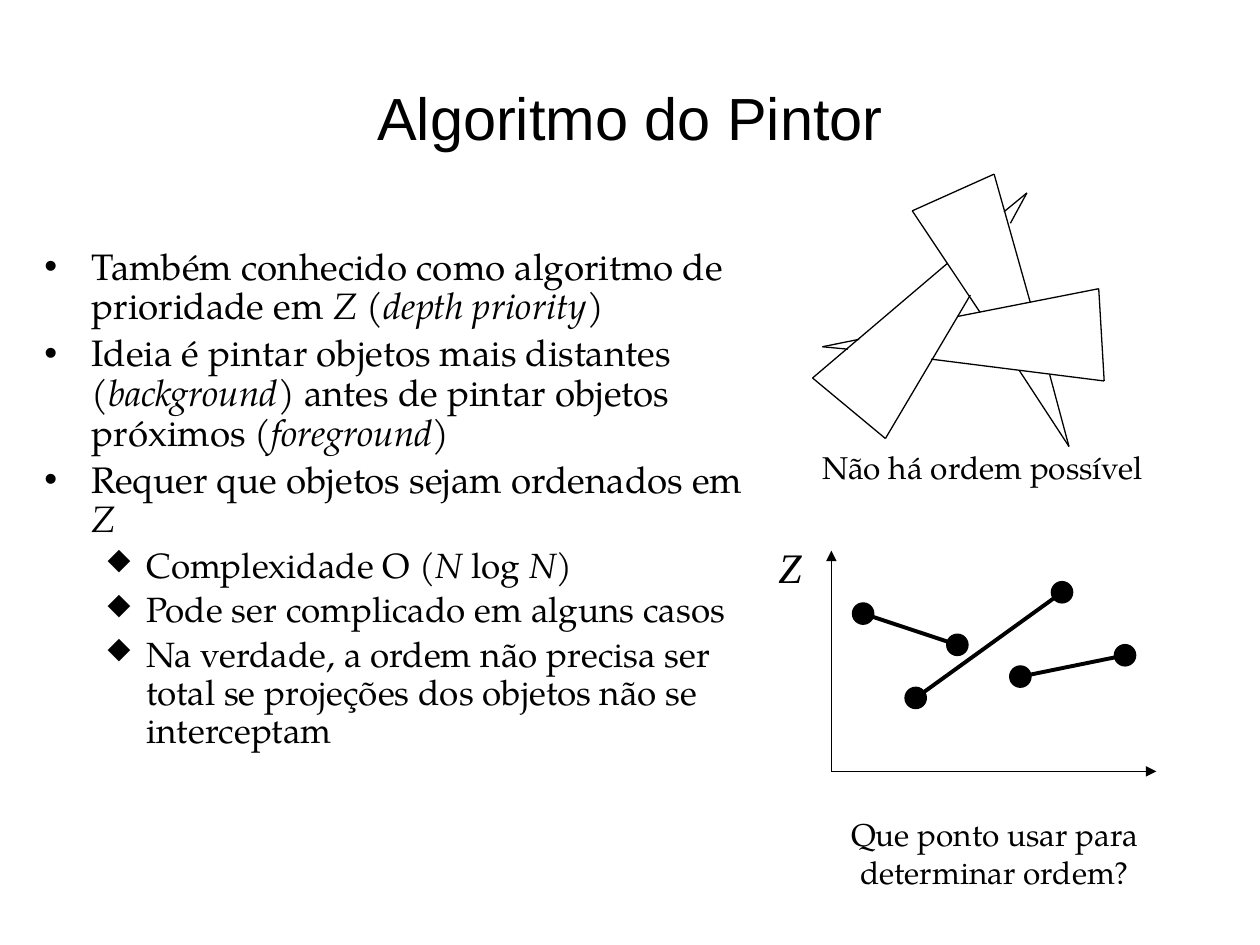
from dataclasses import dataclass
from itertools import pairwise
from lxml.etree import SubElement
from pptx import Presentation
from pptx.dml.color import RGBColor
from pptx.enum.shapes import MSO_CONNECTOR, MSO_SHAPE
from pptx.enum.text import MSO_ANCHOR, MSO_AUTO_SIZE, PP_ALIGN
from pptx.oxml.ns import qn
from pptx.util import Cm, Pt


@dataclass(frozen=True)
class Theme:
    """Colours, fonts, type sizes and line widths."""
    ink: RGBColor = RGBColor(0, 0, 0)
    head: str = "Arial"
    text: str = "TeX Gyre Pagella"
    axis: str = "Times New Roman"
    title: float = 34
    list: float = 21
    sub: float = 20
    note: float = 18
    mark: float = 24
    thin: float = 0.75
    bold: float = 2.25


THEME = Theme()
ITEMS = [
    (0, "Também conhecido como algoritmo de prioridade em *Z* (*depth priority*)"),
    (0, "Ideia é pintar objetos mais distantes (*background*) antes de pintar "
        "objetos próximos (*foreground*)"),
    (0, "Requer que objetos sejam ordenados em *Z*"),
    (1, "Complexidade O (*N* log *N*)"),
    (1, "Pode ser complicado em alguns casos"),
    (1, "Na verdade, a ordem não precisa ser total se projeções dos objetos "
        "não se interceptam"),
]
LEVELS = [
    dict(size=THEME.list, left=0.95, hang=0.95, mark="•", font=THEME.head),
    dict(size=THEME.sub, left=2.06, hang=0.79, mark="⬥", font=THEME.text),
]
PATHS = [
    [(2.72, 1.8), (0, 4.11), (1.47, 5.33), (3.18, 2.44)],
    [(3.38, 2.79), (2.01, 0.74), (3.66, 0), (4.39, 2.59)],
    [(2.92, 2.87), (5.77, 2.31), (5.88, 4.17), (2.39, 3.73)],
    [(0.94, 3.33), (0.2, 3.48), (0.71, 3.53)],
    [(3.86, 0.76), (4.32, 0.38), (3.99, 0.99)],
    [(4.17, 3.96), (5.17, 5.49), (4.78, 4.04)],
]
SPANS = [
    [(0.64, 1.27), (2.54, 1.9)],
    [(1.7, 2.97), (4.65, 0.84)],
    [(3.81, 2.54), (5.92, 2.11)],
]


def apply(item, form):
    """Set each attribute named in the form."""
    for name, value in form.items():
        setattr(item, name, value)


def place(shape, box):
    """Move a shape to a box given in centimetres."""
    apply(shape, dict(zip(("left", "top", "width", "height"), map(Cm, box))))


def write(para, text, font, size):
    """Add runs, with italics between asterisks."""
    for rank, part in enumerate(text.split("*")):
        if part:
            run = para.add_run()
            run.text = part
            apply(run.font, dict(name=font, size=Pt(size), italic=rank % 2 == 1))
            run.font.color.rgb = THEME.ink


def draw_title(slide, box, text):
    """Fill the title placeholder."""
    shape = slide.shapes.title
    place(shape, box)
    apply(shape.text_frame, dict(vertical_anchor=MSO_ANCHOR.MIDDLE,
                                 auto_size=MSO_AUTO_SIZE.NONE))
    para = shape.text_frame.paragraphs[0]
    para.alignment = PP_ALIGN.CENTER
    write(para, text, THEME.head, THEME.title)


def draw_list(slide, box, items):
    """Fill the body placeholder with a bulleted list."""
    shape = slide.placeholders[1]
    place(shape, box)
    frame = shape.text_frame
    frame.auto_size = MSO_AUTO_SIZE.NONE
    for rank, (level, text) in enumerate(items):
        para = frame.add_paragraph() if rank else frame.paragraphs[0]
        form = LEVELS[level]
        apply(para, dict(level=level, line_spacing=0.9,
                         space_before=Pt(form["size"] * 0.2)))
        write(para, text, THEME.text, form["size"])
        props = para._p.get_or_add_pPr()
        props.set("marL", str(Cm(form["left"])))
        props.set("indent", str(-Cm(form["hang"])))
        SubElement(props, qn("a:buFont")).set("typeface", form["font"])
        SubElement(props, qn("a:buChar")).set("char", form["mark"])


def draw_note(slide, box, lines, font, size, align=PP_ALIGN.CENTER):
    """Add a text box with one paragraph per line."""
    frame = slide.shapes.add_textbox(*map(Cm, box)).text_frame
    frame.word_wrap = False
    for rank, text in enumerate(lines):
        para = frame.add_paragraph() if rank else frame.paragraphs[0]
        para.alignment = align
        write(para, text, font, size)


def draw_line(slide, box, start, end, width, arrow=False):
    """Join two points measured from the corner of the box."""
    ends = [Cm(base + step) for point in (start, end)
            for base, step in zip(box, point)]
    line = slide.shapes.add_connector(MSO_CONNECTOR.STRAIGHT, *ends)
    line.line.width = Pt(width)
    line.line.color.rgb = THEME.ink
    if arrow:
        SubElement(line.line._get_or_add_ln(), qn("a:tailEnd")).set("type", "triangle")
    SubElement(line._element.spPr, qn("a:effectLst"))


def draw_dot(slide, box, point, size=0.43):
    """Centre a filled dot on a point of the box."""
    left, top = (base + step - size / 2 for base, step in zip(box, point))
    dot = slide.shapes.add_shape(MSO_SHAPE.OVAL, *map(Cm, (left, top, size, size)))
    dot.shadow.inherit = False
    dot.fill.solid()
    dot.fill.fore_color.rgb = dot.line.color.rgb = THEME.ink
    dot.line.width = Pt(THEME.thin)


def draw_cycle(slide, box):
    """Draw the overlapping outlines and their caption."""
    for trail in PATHS:
        for start, end in pairwise(trail):
            draw_line(slide, box, start, end, THEME.thin)
    left, top, wide, high = box
    draw_note(slide, (left - 0.07, top + high - 0.1, wide + 1.13, 1.02),
              ["Não há ordem possível"], THEME.text, THEME.note)


def draw_graph(slide, box):
    """Draw the depth axes, the spans and their caption."""
    left, top, wide, high = box
    for end in ((0, 0), (wide, high)):
        draw_line(slide, box, (0, high), end, THEME.thin, arrow=True)
    draw_note(slide, (left - 1.32, top - 0.3, 0.89, 1.27), ["*Z*"],
              THEME.axis, THEME.mark, PP_ALIGN.LEFT)
    for span in SPANS:
        draw_line(slide, box, *span, THEME.bold)
        for point in span:
            draw_dot(slide, box, point)
    draw_note(slide, (left + 0.13, top + high + 0.76, 6.32, 1.78),
              ["Que ponto usar para", "determinar ordem?"], THEME.text, THEME.note)


def main():
    """Build and save the slide."""
    deck = Presentation()
    apply(deck, dict(slide_width=Cm(25.4), slide_height=Cm(19.05)))
    slide = deck.slides.add_slide(deck.slide_layouts[1])
    draw_title(slide, (1.27, 0.76, 22.86, 3.18), "Algoritmo do Pintor")
    draw_list(slide, (0.64, 4.88, 15.24, 12.7), ITEMS)
    draw_cycle(slide, (16.38, 3.51, 5.88, 5.49))
    draw_graph(slide, (16.76, 11.1, 6.55, 4.45))
    deck.save("out.pptx")


if __name__ == "__main__":
    main()
